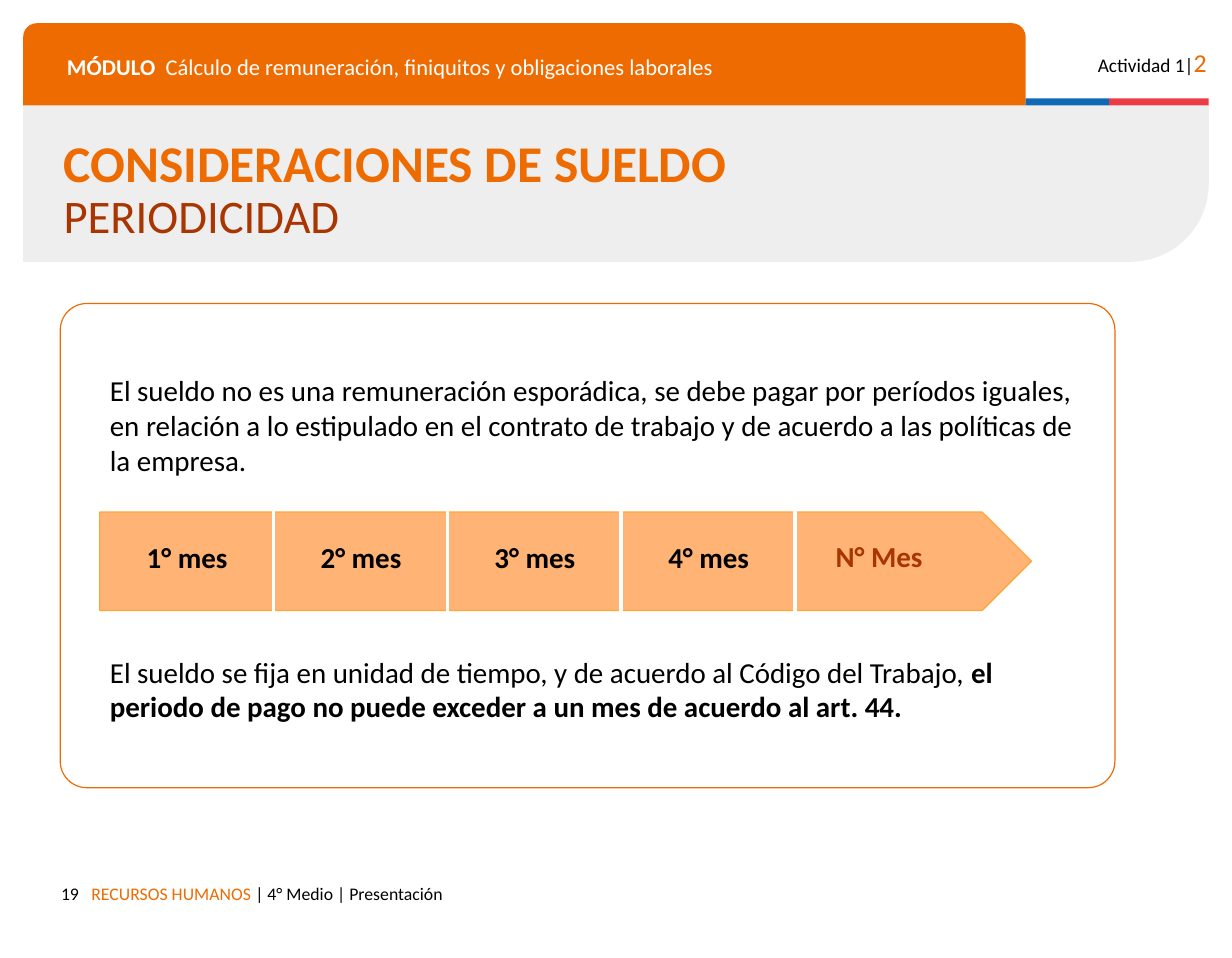
from lxml.etree import SubElement
from pptx import Presentation
from pptx.dml.color import RGBColor
from pptx.enum.shapes import MSO_CONNECTOR as LINK, MSO_SHAPE as FORM
from pptx.enum.text import MSO_ANCHOR as ANCHOR, PP_ALIGN as ALIGN
from pptx.oxml.ns import qn
from pptx.util import Inches, Pt

COLORS = {
    "orange": "ED6B00", "rust": "A93501", "peach": "FFB375", "gold": "FDA739",
    "gray": "EEEEEE", "blue": "0F69B4", "red": "EB3C46",
    "black": "000000", "white": "FFFFFF",
}


def color(name):
    """Return the named colour."""
    return RGBColor.from_string(COLORS[name])


def add_form(slide, kind, box, fill, line=None, adjust=()):
    """Draw a flat preset shape in the box."""
    shape = slide.shapes.add_shape(kind, *map(Inches, box))
    shape.shadow.inherit = False
    shape.fill.solid()
    shape.fill.fore_color.rgb = color(fill)
    if line:
        shape.line.color.rgb = color(line)
        shape.line.width = Pt(0.75)
    else:
        shape.line.fill.background()
    for index, value in enumerate(adjust):
        shape.adjustments[index] = value
    return shape


def add_text(slide, box, paras, size, tint="black", bold=None, align=ALIGN.LEFT,
             inset=(0.1, 0.1), anchor=ANCHOR.TOP, space=None):
    """Write paragraphs of (text, overrides) runs in the box."""
    frame = slide.shapes.add_textbox(*map(Inches, box)).text_frame
    frame.word_wrap = True
    frame.vertical_anchor = anchor
    frame.margin_left = frame.margin_right = Inches(inset[0])
    frame.margin_top = frame.margin_bottom = Inches(inset[1])
    for index, runs in enumerate(paras):
        para = frame.add_paragraph() if index else frame.paragraphs[0]
        para.alignment, para.line_spacing = align, space
        font = para.font
        font.name, font.size, font.bold = "Calibri", Pt(size), bold
        font.color.rgb = color(tint)
        for text, style in runs:
            run = para.add_run()
            run.text = text
            if "size" in style:
                run.font.size = Pt(style["size"])
            if "tint" in style:
                run.font.color.rgb = color(style["tint"])
            if "bold" in style:
                run.font.bold = style["bold"]
    return frame


def add_header(slide, left, top, width, height):
    """Build the module band, the activity label and the title panel."""
    band, tab = 8.65, 0.71
    panel = add_form(slide, FORM.ROUND_1_RECTANGLE,
                     (left, top + tab, width, height - tab), "gray", adjust=[0.5])
    panel.rotation = 180
    panel._element.spPr.xfrm.set("flipH", "1")
    add_form(slide, FORM.ROUND_2_SAME_RECTANGLE, (left, top, band, tab),
             "orange", adjust=[0.167, 0])
    blue = 0.72
    add_form(slide, FORM.RECTANGLE, (left + band, top + 0.65, blue, 0.06), "blue")
    add_form(slide, FORM.RECTANGLE,
             (left + band + blue, top + 0.65, width - band - blue, 0.06), "red")
    add_text(slide, (left + 9.03, top + 0.1, 1.28, 0.38),
             [[("Actividad 1|", {}), ("2", {"size": 16, "tint": "orange"})]],
             12, align=ALIGN.RIGHT)
    add_text(slide, (left + 0.28, top + 0.18, 1, 0.35), [[("MÓDULO", {})]],
             14, "white", bold=True, space=0.9)
    add_text(slide, (left + 1.13, top + 0.18, 7.29, 0.35),
             [[("Cálculo de remuneración, finiquitos y obligaciones laborales", {})]],
             14, "white", space=0.9)
    add_text(slide, (left + 0.25, top + 0.94, 9.89, 1.12),
             [[("CONSIDERACIONES DE SUELDO", {"size": 32, "bold": True})],
              [("PERIODICIDAD", {"tint": "rust"})]],
             29, "orange", inset=(0.1, 0.05), space=0.9)


def add_months(slide, left, top, width, height):
    """Build the arrow of months with its dividers."""
    add_form(slide, FORM.PENTAGON, (left, top, width, height), "peach", "gold", [0.5])
    step = 1.5
    for index in range(4):
        edge = left + step * (index + 1)
        rule = slide.shapes.add_connector(
            LINK.STRAIGHT, Inches(edge), Inches(top - 0.21),
            Inches(edge), Inches(top + height + 0.05))
        rule.line.color.rgb = color("white")
        rule.line.width = Pt(2.25)
        SubElement(rule._element.spPr, qn("a:effectLst"))
        add_text(slide, (edge - 1.4, top + 0.14, 1.31, 0.52),
                 [[(f"{index + 1}° mes", {})]], 18, bold=True, align=ALIGN.CENTER,
                 inset=(0.12, 0.12), anchor=ANCHOR.BOTTOM, space=0.9)
    add_text(slide, (left + 5.57, top + 0.14, 2.31, 0.52), [[("N° Mes", {})]],
             18, "rust", bold=True, align=ALIGN.CENTER, inset=(0.12, 0.12), space=0.9)


def add_card(slide, left, top, width, height):
    """Build the outlined card with its text and month arrow."""
    add_form(slide, FORM.ROUNDED_RECTANGLE, (left, top, width, height),
             "white", "orange", [0.055])
    frame = add_text(
        slide, (left + 0.33, top + 0.55, 8.57, 3.1),
        [[("El sueldo no es una remuneración esporádica, se debe pagar por períodos "
           "iguales, en relación a lo estipulado en el contrato de trabajo y de "
           "acuerdo a las políticas de la empresa.", {})],
         [("El sueldo se fija en unidad de tiempo, y de acuerdo al Código del "
           "Trabajo, ", {}),
          ("el periodo de pago no puede exceder a un mes de acuerdo al art. 44.",
           {"bold": True})]],
        18, inset=(0.1, 0.05))
    frame.paragraphs[1].space_before = Pt(110)
    add_months(slide, left + 0.34, top + 1.8, 8.04, 0.85)


def add_footer(slide, left, top, width, height):
    """Build the page number and the course line."""
    add_text(slide, (left, top, 0.58, height), [[("19", {})]], 11, align=ALIGN.RIGHT)
    add_text(slide, (left + 0.49, top, width - 0.49, height),
             [[("RECURSOS HUMANOS ", {"tint": "orange"}),
               ("| 4° Medio | Presentación", {})]], 11)


def main():
    """Build and save the slide."""
    deck = Presentation()
    deck.slide_width, deck.slide_height = Inches(10.63), Inches(8.27)
    slide = deck.slides.add_slide(deck.slide_layouts[6])
    add_header(slide, 0.2, 0.2, 10.23, 2.06)
    add_card(slide, 0.52, 2.62, 9.1, 4.18)
    add_footer(slide, 0.2, 7.53, 7.63, 0.38)
    deck.save("out.pptx")


if __name__ == "__main__":
    main()
